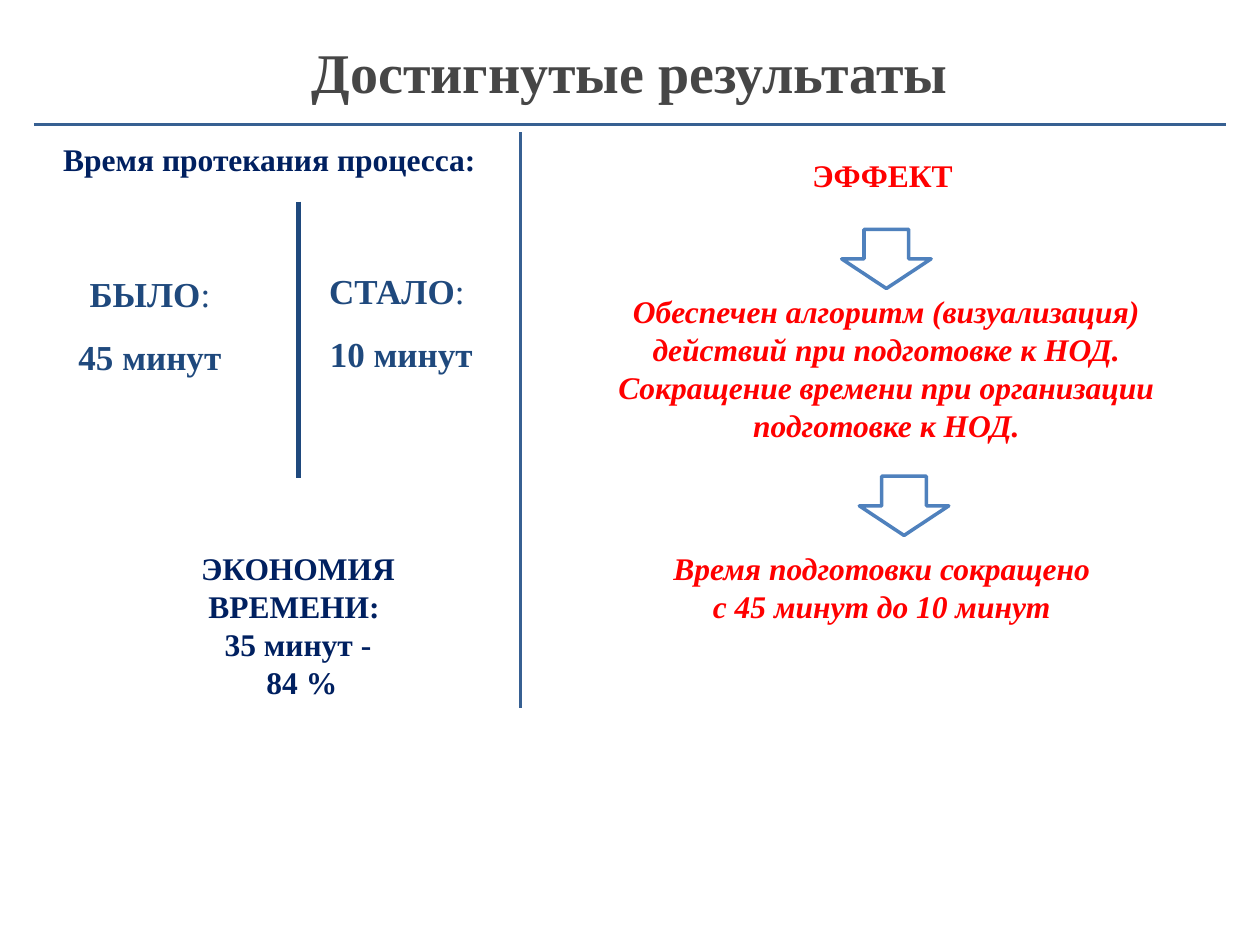
from dataclasses import dataclass

from lxml.etree import SubElement
from pptx import Presentation
from pptx.dml.color import RGBColor
from pptx.enum.shapes import MSO_CONNECTOR, MSO_SHAPE
from pptx.enum.text import MSO_ANCHOR, PP_ALIGN
from pptx.oxml.ns import qn
from pptx.slide import Slide
from pptx.util import Inches, Pt

COLUMNS, ROWS = 100, 75
SLIDE_WIDTH, SLIDE_HEIGHT = Inches(10), Inches(7.5)
FONT = "Times New Roman"
COLORS = {
    "title": "464646",
    "navy": "002060",
    "blue": "1F497D",
    "rule": "376092",
    "arrow": "4F81BD",
    "red": "FF0000",
    "white": "FFFFFF",
}


@dataclass(frozen=True)
class Box:
    column: float
    row: float
    columns: float
    rows: float


@dataclass(frozen=True)
class Rule:
    start: tuple[float, float]
    end: tuple[float, float]
    color: str
    width: float


@dataclass(frozen=True)
class Timing:
    box: Box
    label: str
    duration: str


RULES = (
    Rule((2.7, 9.9), (97.3, 9.9), "rule", 2),
    Rule((41.3, 10.5), (41.3, 56.2), "rule", 1.5),
    Rule((23.7, 16), (23.7, 37.9), "blue", 3),
)
ARROWS = (Box(66.8, 18.2, 7.1, 4.7), Box(68.2, 37.8, 7.1, 4.7))
TIMINGS = (
    Timing(Box(2.7, 19.5, 18.4, 13.5), "БЫЛО", "45 минут"),
    Timing(Box(23.8, 19.2, 15.4, 13.5), "СТАЛО", " 10 минут"),
)


def across(columns: float) -> int:
    return round(SLIDE_WIDTH * columns / COLUMNS)


def down(rows: float) -> int:
    return round(SLIDE_HEIGHT * rows / ROWS)


def place(box: Box) -> tuple[int, int, int, int]:
    return across(box.column), down(box.row), across(box.columns), down(box.rows)


def add_text(slide: Slide, box: Box, *lines: str, color: str, size: float = 18,
             italic: bool = False, spacing: float = 1, wrap: bool = True,
             anchor: MSO_ANCHOR = MSO_ANCHOR.TOP, top_rows: float = 0.5,
             plain_ending: str = "") -> None:
    frame = slide.shapes.add_textbox(*place(box)).text_frame
    frame.word_wrap = wrap
    frame.vertical_anchor = anchor
    frame.margin_top = down(top_rows)
    for index, line in enumerate(lines):
        paragraph = frame.add_paragraph() if index else frame.paragraphs[0]
        paragraph.alignment = PP_ALIGN.CENTER
        paragraph.line_spacing = spacing
        pieces = [(line, True)]
        if plain_ending and line.endswith(plain_ending):
            pieces = [(line.removesuffix(plain_ending), True), (plain_ending, False)]
        for text, bold in pieces:
            run = paragraph.add_run()
            run.text = text
            run.font.name = FONT
            run.font.size = Pt(size)
            run.font.bold = bold
            run.font.italic = italic
            run.font.color.rgb = RGBColor.from_string(COLORS[color])


def add_rule(slide: Slide, rule: Rule) -> None:
    (left, top), (right, bottom) = rule.start, rule.end
    connector = slide.shapes.add_connector(
        MSO_CONNECTOR.STRAIGHT, across(left), down(top), across(right), down(bottom))
    connector.line.color.rgb = RGBColor.from_string(COLORS[rule.color])
    connector.line.width = Pt(rule.width)
    SubElement(connector._element.spPr, qn("a:effectLst"))


def add_arrow(slide: Slide, box: Box) -> None:
    shape = slide.shapes.add_shape(MSO_SHAPE.DOWN_ARROW, *place(box))
    shape.shadow.inherit = False
    shape.fill.solid()
    shape.fill.fore_color.rgb = RGBColor.from_string(COLORS["white"])
    shape.line.color.rgb = RGBColor.from_string(COLORS["arrow"])
    shape.line.width = Pt(2)


def main() -> None:
    presentation = Presentation()
    presentation.slide_width, presentation.slide_height = SLIDE_WIDTH, SLIDE_HEIGHT
    slide = presentation.slides.add_slide(presentation.slide_layouts[6])

    add_text(slide, Box(1.2, 2.1, 97.6, 7.1), "Достигнутые результаты",
             color="title", size=32, anchor=MSO_ANCHOR.MIDDLE)
    add_text(slide, Box(44.5, 16.8, 51.7, 21.9),
             "Обеспечен алгоритм (визуализация) действий при подготовке к НОД.",
             "Сокращение времени при организации подготовке к НОД.",
             color="red", italic=True, top_rows=6.4)
    for rule in RULES:
        add_rule(slide, rule)
    for arrow in ARROWS:
        add_arrow(slide, arrow)
    add_text(slide, Box(45.5, 43.1, 49.6, 7.1), "Время подготовки сокращено ",
             "с 45 минут до 10 минут ", color="red", italic=True)
    add_text(slide, Box(3.6, 10.6, 36.2, 4), "Время протекания процесса: ", color="navy")
    for timing in TIMINGS:
        add_text(slide, timing.box, f"{timing.label}:", timing.duration,
                 color="blue", size=20, spacing=1.5, plain_ending=":")
    add_text(slide, Box(9.2, 43.1, 28.9, 13.1), "ЭКОНОМИЯ ВРЕМЕНИ: ",
             "35 минут -", " 84 %", color="navy")
    add_text(slide, Box(63.4, 11.9, 13.9, 4), "ЭФФЕКТ ", color="red", wrap=False)

    presentation.save("out.pptx")


if __name__ == "__main__":
    main()
